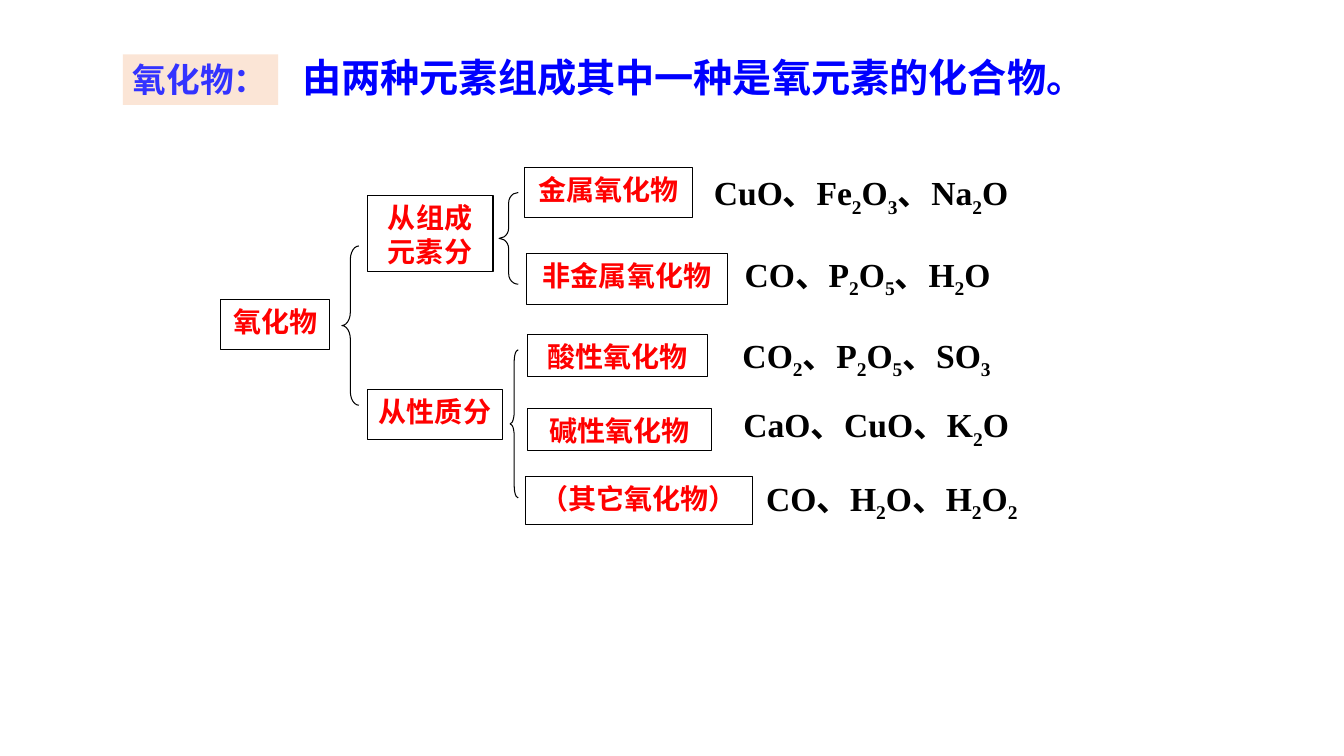
from itertools import groupby
from typing import NamedTuple

from lxml.etree import SubElement
from pptx import Presentation
from pptx.dml.color import RGBColor
from pptx.enum.shapes import MSO_SHAPE as Shape
from pptx.enum.text import MSO_ANCHOR as Anchor, PP_ALIGN as Align
from pptx.oxml.ns import qn
from pptx.util import Inches, Pt

BLACK = RGBColor(0x00, 0x00, 0x00)
WHITE = RGBColor(0xFF, 0xFF, 0xFF)
RED = RGBColor(0xFF, 0x00, 0x00)
BLUE = RGBColor(0x00, 0x00, 0xFF)
VIOLET = RGBColor(0x33, 0x33, 0xFF)
PEACH = RGBColor(0xFB, 0xE5, 0xD6)

CHINESE_FONT = "Noto Sans CJK SC"
FORMULA_FONT = "Times New Roman"
TITLE_FONT = "Arial"


class Area(NamedTuple):
    left: float
    top: float
    width: float
    height: float

    def lengths(self):
        return [Inches(value) for value in self]


class Label(NamedTuple):
    text: str
    area: Area


class Brace(NamedTuple):
    area: Area
    curl: float


CATEGORIES = [
    Label("氧化物", Area(2.19, 2.97, 1.08, 0.5)),
    Label("从组成元素分", Area(3.64, 1.94, 1.25, 0.75)),
    Label("从性质分", Area(3.65, 3.86, 1.33, 0.5)),
    Label("金属氧化物", Area(5.2, 1.66, 1.67, 0.5)),
    Label("非金属氧化物", Area(5.22, 2.52, 2, 0.5)),
    Label("酸性氧化物", Area(5.23, 3.32, 1.79, 0.42)),
    Label("碱性氧化物", Area(5.23, 4.05, 1.83, 0.42)),
    Label("（其它氧化物）", Area(5.21, 4.73, 2.25, 0.47)),
]
EXAMPLES = [
    Label("CuO、Fe2O3、Na2O", Area(6.54, 1.66, 4, 0.5)),
    Label("CO、P2O5、H2O", Area(6.86, 2.47, 3.49, 0.49)),
    Label("CO2、P2O5、SO3", Area(6.85, 3.27, 3.49, 0.42)),
    Label("CaO、CuO、K2O", Area(6.83, 3.96, 3.72, 0.48)),
    Label("CO、H2O、H2O2", Area(7.14, 4.69, 3.41, 0.55)),
]
BRACES = [
    Brace(Area(3.39, 2.44, 0.17, 1.58), 0.79),
    Brace(Area(4.95, 1.91, 0.19, 0.91), 0.54),
    Brace(Area(5.06, 3.47, 0.08, 1.47), 1.47),
]


def format_run(run, font_name: str, size: int, color: RGBColor) -> None:
    run.font.name = font_name
    run.font.size = Pt(size)
    run.font.bold = True
    run.font.color.rgb = color
    east_asian = SubElement(run.font._element, qn("a:ea"))
    east_asian.set("typeface", CHINESE_FONT)


def add_box(slide, label: Label, fill: RGBColor):
    box = slide.shapes.add_shape(Shape.RECTANGLE, *label.area.lengths())
    box.shadow.inherit = False
    box.fill.solid()
    box.fill.fore_color.rgb = fill
    box.text_frame.text = label.text
    box.text_frame.vertical_anchor = Anchor.TOP
    return box


def add_category(slide, label: Label) -> None:
    box = add_box(slide, label, WHITE)
    box.line.color.rgb = BLACK
    box.line.width = Pt(0.75)
    paragraph = box.text_frame.paragraphs[0]
    paragraph.alignment = Align.CENTER
    format_run(paragraph.runs[0], CHINESE_FONT, 20, RED)


def add_example(slide, label: Label) -> None:
    """Add a list of formulas, with every digit as a subscript."""
    text_box = slide.shapes.add_textbox(*label.area.lengths())
    text_box.text_frame.word_wrap = True
    paragraph = text_box.text_frame.paragraphs[0]
    paragraph.alignment = Align.CENTER
    for is_subscript, characters in groupby(label.text, str.isdigit):
        run = paragraph.add_run()
        run.text = "".join(characters)
        format_run(run, FORMULA_FONT, 24, BLACK)
        if is_subscript:
            run.font._element.set("baseline", "-25000")


def add_brace(slide, brace: Brace) -> None:
    shape = slide.shapes.add_shape(Shape.LEFT_BRACE, *brace.area.lengths())
    shape.shadow.inherit = False
    shape.adjustments[0] = brace.curl
    shape.adjustments[1] = 0.5
    shape.fill.background()
    shape.line.color.rgb = BLACK
    shape.line.width = Pt(0.75)


def add_definition(slide) -> None:
    term = add_box(slide, Label("氧化物：", Area(1.22, 0.54, 1.54, 0.5)), PEACH)
    term.line.fill.background()
    term.text_frame.word_wrap = False
    paragraph = term.text_frame.paragraphs[0]
    paragraph.alignment = Align.LEFT
    format_run(paragraph.runs[0], FORMULA_FONT, 24, VIOLET)

    meaning = slide.shapes.add_textbox(*Area(2.9, 0.48, 8.74, 0.57).lengths())
    meaning.text_frame.word_wrap = True
    meaning.text_frame.text = "由两种元素组成其中一种是氧元素的化合物。"
    format_run(meaning.text_frame.paragraphs[0].runs[0], TITLE_FONT, 28, BLUE)


def main() -> None:
    presentation = Presentation()
    presentation.slide_width = Inches(13.33)
    presentation.slide_height = Inches(7.5)
    slide = presentation.slides.add_slide(presentation.slide_layouts[6])
    add_definition(slide)
    for category in CATEGORIES:
        add_category(slide, category)
    for brace in BRACES:
        add_brace(slide, brace)
    for example in EXAMPLES:
        add_example(slide, example)
    presentation.save("out.pptx")


if __name__ == "__main__":
    main()
